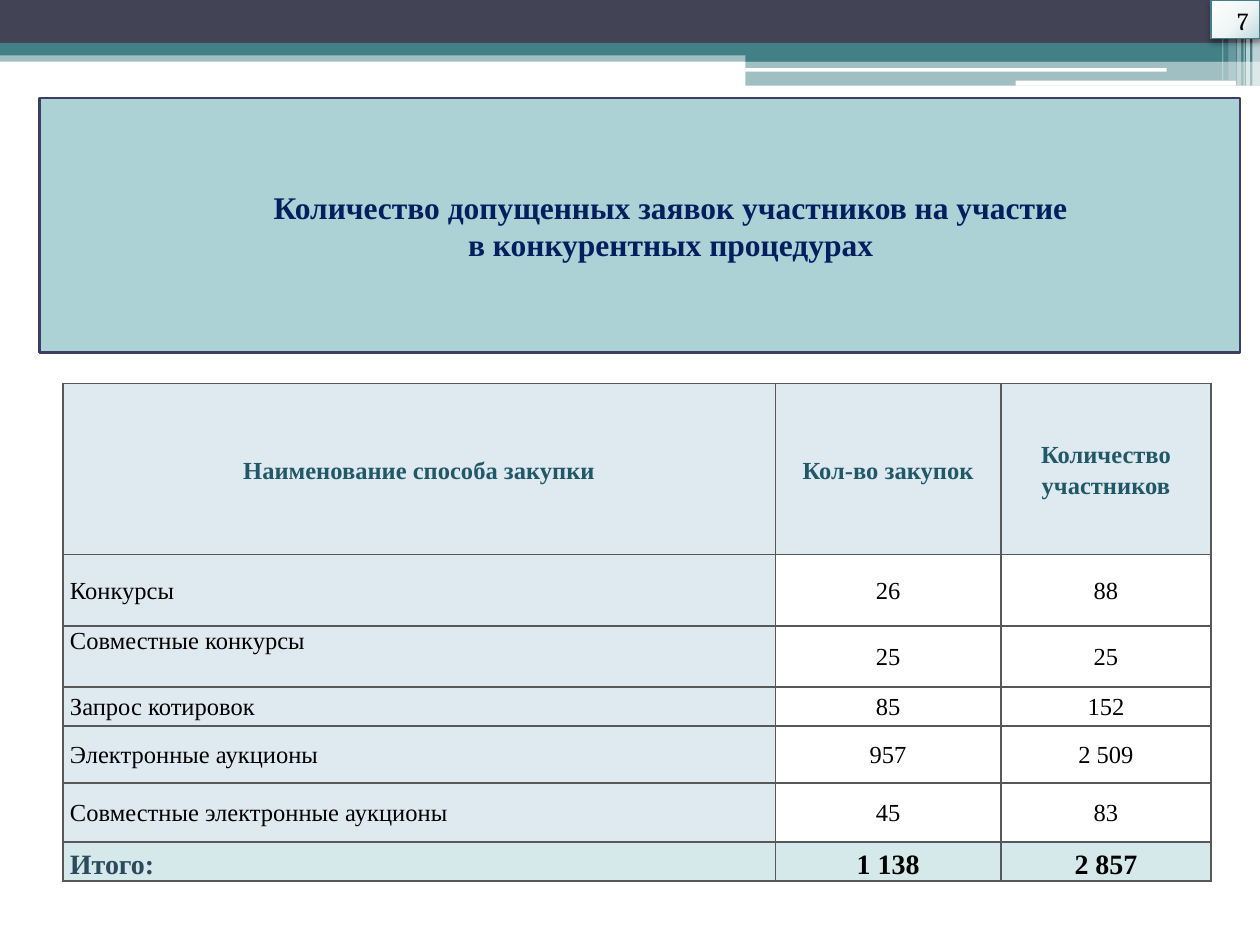
import pptx
import pptx.util
import pptx.dml.color
import pptx.enum.shapes
import pptx.enum.text
import pptx.oxml
import pptx.oxml.ns
from dataclasses import dataclass

Pt = pptx.util.Pt
Shape = pptx.enum.shapes.MSO_SHAPE
Align = pptx.enum.text.PP_ALIGN
Anchor = pptx.enum.text.MSO_ANCHOR
NS = pptx.oxml.ns.nsdecls("a")


@dataclass(frozen=True)
class Theme:
    dark: str = "424456"
    teal: str = "438086"
    white: str = "FFFFFF"
    black: str = "000000"
    panel: str = "ADD2D6"
    edge: str = "3D3E66"
    navy: str = "002060"
    head: str = "215868"
    label: str = "DEE9F0"
    total: str = "D6E9EA"
    slate: str = "2B4A5E"
    grid: str = "585858"
    serif: str = "Times New Roman"
    page: str = "Cambria"
    large: int = 18
    medium: int = 16
    small: int = 14


THEME = Theme()

# left, top, width, height, colour, opacity in percent
BANDS = [
    (0, 28.8, 720, 6.5, THEME.teal, 50),
    (0, 0, 720, 24.5, THEME.dark, 100),
    (0, 24.5, 720, 7.2, THEME.teal, 100),
    (426, 28.1, 294, 7.2, THEME.teal, 100),
    (426, 34.6, 294, 14.4, THEME.teal, 50),
]
BARS = [(425.5, 38.9, 241.2, 2), (580.3, 46.1, 126, 2.9)]
# left, width, height, opacity in percent
STRIPES = [
    (715.7, 4.3, 49, 65),
    (712.1, 2.2, 49, 65),
    (710.6, 0.7, 49, 60),
    (707, 2.2, 49, 40),
    (702, 4.3, 46, 20),
    (698.4, 0.7, 46, 30),
]
COLS = [407, 129, 120]
HEIGHTS = [98, 40.6, 35, 22.3, 32.6, 33.7, 22.3]
ROWS = [
    ("Наименование способа закупки", "Кол-во закупок", "Количество участников"),
    ("Конкурсы", "26", "88"),
    ("Совместные конкурсы", "25", "25"),
    ("Запрос котировок", "85", "152"),
    ("Электронные аукционы", "957", "2 509"),
    ("Совместные электронные аукционы", "45", "83"),
    ("Итого:", "1 138", "2 857"),
]
JOINT = 2  # this row has its label at the top


def rgb(code):
    return pptx.dml.color.RGBColor.from_string(code)


def box(slide, kind, left, top, width, height):
    shape = slide.shapes.add_shape(kind, Pt(left), Pt(top), Pt(width), Pt(height))
    shape.shadow.inherit = False
    return shape


def band(slide, left, top, width, height, color, alpha=100, kind=Shape.RECTANGLE):
    shape = box(slide, kind, left, top, width, height)
    shape.line.fill.background()
    paint(shape, color)
    if alpha < 100:
        tint = shape.fill._xPr.find(".//" + pptx.oxml.ns.qn("a:srgbClr"))
        tint.append(pptx.oxml.parse_xml(f'<a:alpha {NS} val="{alpha * 1000}"/>'))


def paint(item, color):
    item.fill.solid()
    item.fill.fore_color.rgb = rgb(color)


def outline(shape, color, width):
    shape.line.color.rgb = rgb(color)
    shape.line.width = Pt(width)


def style(para, size, color, bold=False, name=THEME.serif, align=Align.CENTER):
    para.alignment = align
    font = para.font
    font.name, font.size, font.bold = name, Pt(size), bold
    font.color.rgb = rgb(color)


def title(slide):
    shape = slide.shapes.title
    shape.left, shape.top, shape.width, shape.height = map(Pt, (22.5, 56, 686, 145.5))
    shape._element.spPr.append(pptx.oxml.parse_xml(
        f'<a:prstGeom {NS} prst="roundRect"><a:avLst/></a:prstGeom>'))
    paint(shape, THEME.panel)
    outline(shape, THEME.edge, 1.5)
    frame = shape.text_frame
    frame.text = ("Количество допущенных заявок участников на участие\n"
                  "в конкурентных процедурах")
    frame.vertical_anchor = Anchor.MIDDLE
    for para in frame.paragraphs:
        style(para, THEME.large, THEME.navy, True)
        para._p.get_or_add_pPr().set("indent", str(Pt(35.5)))


def border(cell):
    props = cell._tc.get_or_add_tcPr()
    for place, side in enumerate("LRTB"):
        props.insert(place, pptx.oxml.parse_xml(
            f'<a:ln{side} {NS} w="{Pt(1)}"><a:solidFill>'
            f'<a:srgbClr val="{THEME.grid}"/></a:solidFill></a:ln{side}>'))


def fill_cell(cell, text, row, col):
    head, total, label = row == 0, row == len(ROWS) - 1, col == 0
    cell.text = text
    cell.margin_left = Pt(4 if head or label else 1)
    cell.margin_right = Pt(4 if head else 1)
    cell.margin_top, cell.margin_bottom = Pt(0 if head else 1), 0
    cell.vertical_anchor = Anchor.MIDDLE
    if total and not label:
        cell.vertical_anchor = Anchor.BOTTOM
    elif row == JOINT and label:
        cell.vertical_anchor = Anchor.TOP
    para = cell.text_frame.paragraphs[0]
    color = THEME.head if head else THEME.slate if total and label else THEME.black
    style(para, THEME.medium if total else THEME.small, color, head or total,
          align=Align.LEFT if label and not head else Align.CENTER)
    if head or (total and label):
        para.line_spacing = 1.15
    if total:
        paint(cell, THEME.total)
    elif head or label:
        paint(cell, THEME.label)
    else:
        cell.fill.background()
    border(cell)


def table(slide):
    grid = slide.shapes.add_table(len(ROWS), len(COLS), Pt(36), Pt(219),
                                  Pt(sum(COLS)), Pt(sum(HEIGHTS))).table
    for col, width in zip(grid.columns, COLS):
        col.width = Pt(width)
    for row, height in zip(grid.rows, HEIGHTS):
        row.height = Pt(height)
    for row, texts in enumerate(ROWS):
        for col, text in enumerate(texts):
            fill_cell(grid.cell(row, col), text, row, col)


def badge(slide):
    """Page number on a glowing tile with a soft shadow."""
    shape = box(slide, Shape.RECTANGLE, 692, 0, 28, 22)
    outline(shape, THEME.teal, 0.75)
    props = shape._element.spPr
    stops = "".join(f'<a:gs pos="{pos}000"><a:srgbClr val="{color}"/></a:gs>'
                    for pos, color in ((0, "FEFEFE"), (55, "F0F6F6"), (100, "BFD9DD")))
    props.insert(2, pptx.oxml.parse_xml(
        f'<a:gradFill {NS}><a:gsLst>{stops}</a:gsLst><a:path path="circle">'
        '<a:fillToRect l="-40000" t="-90000" r="140000" b="190000"/>'
        '</a:path></a:gradFill>'))
    props.find(pptx.oxml.ns.qn("a:effectLst")).append(pptx.oxml.parse_xml(
        f'<a:outerShdw {NS} blurRad="{Pt(4.1)}" dist="{Pt(2)}" dir="5400000">'
        f'<a:srgbClr val="{THEME.black}"><a:alpha val="40000"/></a:srgbClr>'
        '</a:outerShdw>'))
    frame = shape.text_frame
    frame.text = "7"
    frame.vertical_anchor = Anchor.TOP
    para = frame.paragraphs[0]
    style(para, THEME.small, THEME.black, name=THEME.page)
    para.space_before = Pt(3)
    para._p.get_or_add_pPr().set("marL", str(Pt(8.6)))


def main():
    deck = pptx.Presentation()
    deck.slide_width, deck.slide_height = Pt(720), Pt(540)
    slide = deck.slides.add_slide(deck.slide_layouts[5])
    for item in BANDS:
        band(slide, *item)
    for item in BARS:
        band(slide, *item, THEME.white, kind=Shape.ROUNDED_RECTANGLE)
    for left, width, height, alpha in STRIPES:
        band(slide, left, 0, width, height, THEME.white, alpha)
    title(slide)
    table(slide)
    badge(slide)
    deck.save("out.pptx")


if __name__ == "__main__":
    main()
